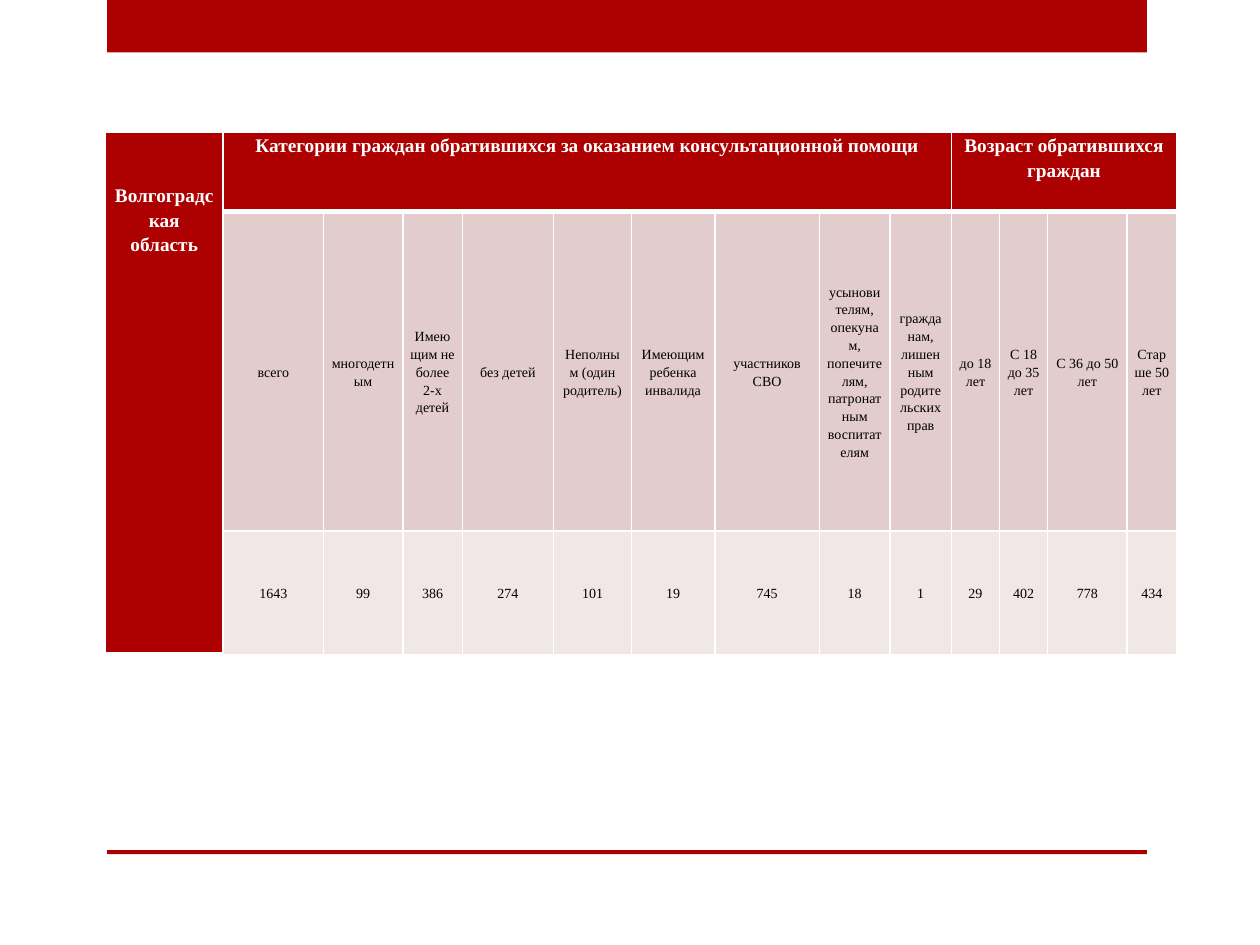
from lxml.etree import SubElement
from pptx import Presentation
from pptx.dml.color import RGBColor
from pptx.enum.shapes import MSO_SHAPE
from pptx.enum.text import MSO_ANCHOR, PP_ALIGN
from pptx.oxml.ns import qn
from pptx.util import Cm, Pt

RED, ROSE, PALE, WHITE, BLACK = "AD0101", "E3CCCC", "F1E7E7", "FFFFFF", "000000"

COLUMN_WIDTHS = [2.38, 2.02, 1.6, 1.2, 1.84, 1.57, 1.68,
                 2.11, 1.42, 1.24, 0.97, 0.97, 1.6, 1.0]
ROW_HEIGHTS = [1.6, 6.43, 1.14]

REGION = "Волгоградская область"
# Heading, first column, last column
GROUPS = [
    ("Категории граждан обратившихся за оказанием консультационной помощи", 1, 9),
    ("Возраст обратившихся граждан", 10, 13),
]
COUNTS = [
    ("всего", 1643),
    ("многодетным", 99),
    ("Имеющим не более 2-х детей", 386),
    ("без детей", 274),
    ("Неполным (один родитель)", 101),
    ("Имеющим ребенка инвалида", 19),
    ("участников СВО", 745),
    ("усыновителям, опекунам, попечителям, патронатным воспитателям", 18),
    ("гражданам, лишенным родительских прав", 1),
    ("до 18 лет", 29),
    ("С 18 до 35 лет", 402),
    ("С 36 до 50 лет", 778),
    ("Старше 50 лет", 434),
]

HEADING = {"name": "Times New Roman", "size": Pt(11), "bold": True}
BODY = {"name": "Times New Roman", "size": Pt(8), "bold": False}


def color(hex_value):
    return RGBColor.from_string(hex_value)


def add_bar(slide, left, top, width, height):
    bar = slide.shapes.add_shape(
        MSO_SHAPE.RECTANGLE, Cm(left), Cm(top), Cm(width), Cm(height))
    bar.shadow.inherit = False
    bar.fill.solid()
    bar.fill.fore_color.rgb = color(RED)
    bar.line.fill.background()


def add_frame(slide, left, top, width, height):
    """Thick bar at the top of the box, thin rule at its bottom."""
    rule = 0.08
    add_bar(slide, left, top, width, 1.06)
    add_bar(slide, left, top + height - rule, width, rule)


def set_borders(cell, bottom):
    properties = cell._tc.get_or_add_tcPr()
    for side, points in {"lnL": 1, "lnR": 1, "lnT": 1, "lnB": bottom}.items():
        line = SubElement(properties, qn(f"a:{side}"), w=str(Pt(points)))
        fill = SubElement(line, qn("a:solidFill"))
        SubElement(fill, qn("a:srgbClr"), val=WHITE)


def style_cell(cell, fill, bottom=1):
    set_borders(cell, bottom)
    cell.fill.solid()
    cell.fill.fore_color.rgb = color(fill)
    margins = {"margin_left": Cm(0.15), "margin_right": Cm(0.15),
               "margin_top": 0, "margin_bottom": 0}
    for key, value in margins.items():
        setattr(cell, key, value)


def write_cell(cell, text, text_format, text_color, anchor):
    cell.vertical_anchor = anchor
    paragraph = cell.text_frame.paragraphs[0]
    paragraph.alignment = PP_ALIGN.CENTER
    paragraph.line_spacing = 1.15
    run = paragraph.add_run()
    run.text = text
    for key, value in text_format.items():
        setattr(run.font, key, value)
    run.font.color.rgb = color(text_color)


def add_counts_table(slide, left, top):
    table = slide.shapes.add_table(
        len(ROW_HEIGHTS), len(COLUMN_WIDTHS), Cm(left), Cm(top),
        Cm(sum(COLUMN_WIDTHS)), Cm(sum(ROW_HEIGHTS))).table
    table.first_row = table.horz_banding = False
    for column, width in zip(table.columns, COLUMN_WIDTHS):
        column.width = Cm(width)
    for row, height in zip(table.rows, ROW_HEIGHTS):
        row.height = Cm(height)

    # Fills and borders
    for r, row_fill in enumerate([RED, ROSE, PALE]):
        for c in range(len(COLUMN_WIDTHS)):
            style_cell(table.cell(r, c), RED if c == 0 else row_fill,
                       bottom=3 if r == 0 else 1)

    # Region name, set lower than the group headings
    region = table.cell(0, 0)
    region.merge(table.cell(2, 0))
    region.margin_top = Cm(1)
    write_cell(region, REGION, HEADING, WHITE, MSO_ANCHOR.TOP)

    # Group headings
    for heading, first, last in GROUPS:
        group = table.cell(0, first)
        group.merge(table.cell(0, last))
        write_cell(group, heading, HEADING, WHITE, MSO_ANCHOR.TOP)

    # Categories and their counts
    for c, entry in enumerate(COUNTS, start=1):
        for r, value in enumerate(entry, start=1):
            write_cell(table.cell(r, c), str(value), BODY, BLACK, MSO_ANCHOR.MIDDLE)


def main():
    presentation = Presentation()
    presentation.slide_width, presentation.slide_height = Cm(25.4), Cm(19.05)
    slide = presentation.slides.add_slide(presentation.slide_layouts[6])
    add_frame(slide, 2.16, 0, 20.96, 17.22)
    add_counts_table(slide, 2.12, 2.67)
    presentation.save("out.pptx")


if __name__ == "__main__":
    main()
